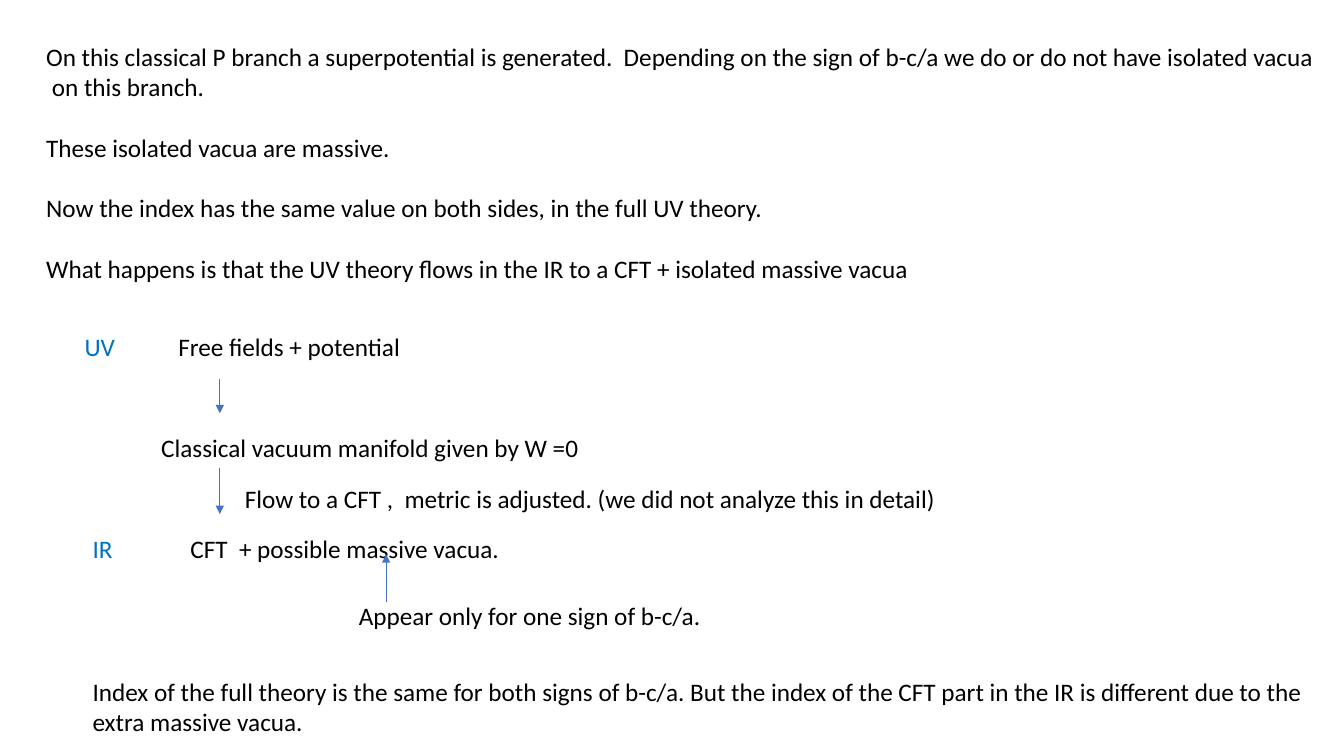
from dataclasses import dataclass

from lxml import etree
from pptx import Presentation
from pptx import util as u
from pptx.dml.color import RGBColor
from pptx.enum import shapes, text
from pptx.oxml.ns import qn
from pptx.slide import Slide

EMU_PER_PX = 9144
FONT = "Calibri"
BLACK, SCALE_BLUE, ARROW_BLUE = "000000", "0070C0", "4472C4"
STATEMENT_GAP = 21.6


@dataclass(frozen=True)
class Passage:
    left: int
    top: int
    width: int
    height: int
    lines: tuple[str, ...]
    colour: str = BLACK
    wraps: bool = False
    spaced_from: int = 1


@dataclass(frozen=True)
class Arrow:
    x: int
    start_y: int
    end_y: int


PASSAGES = (
    Passage(36, 36, 1293, 252, (
        "On this classical P branch a superpotential is generated.  "
        "Depending on the sign of b-c/a we do or do not have isolated vacua",
        " on this branch.",
        "These isolated vacua are massive.",
        "Now the index has the same value on both sides, in the full UV theory.",
        "What happens is that the UV theory flows in the IR to a CFT + isolated massive vacua",
    ), spaced_from=2),
    Passage(167, 324, 255, 40, ("Free fields + potential",)),
    Passage(150, 424, 439, 40, ("Classical vacuum manifold given by W =0",)),
    Passage(233, 475, 713, 40, (
        "Flow to a CFT ,  metric is adjusted. (we did not analyze this in detail)",)),
    Passage(179, 524, 336, 40, ("CFT  + possible massive vacua.",)),
    Passage(74, 324, 51, 40, ("UV",), SCALE_BLUE),
    Passage(82, 524, 40, 40, ("IR",), SCALE_BLUE),
    Passage(346, 591, 369, 40, ("Appear only for one sign of b-c/a.",)),
    Passage(82, 666, 1223, 71, (
        "Index of the full theory is the same for both signs of b-c/a. "
        "But the index of the CFT part in the IR is different due to the extra massive vacua.",
    ), wraps=True),
)

ARROWS = (Arrow(218, 376, 410), Arrow(218, 464, 510), Arrow(383, 597, 550))


def px(length: int) -> u.Emu:
    return u.Emu(length * EMU_PER_PX)


def rgb(colour: str) -> RGBColor:
    return RGBColor.from_string(colour)


def draw_passage(slide: Slide, passage: Passage) -> None:
    box = slide.shapes.add_textbox(
        px(passage.left), px(passage.top), px(passage.width), px(passage.height))
    frame = box.text_frame
    frame.text = "\n".join(passage.lines)
    frame.word_wrap = passage.wraps
    frame.auto_size = text.MSO_AUTO_SIZE.SHAPE_TO_FIT_TEXT
    for number, paragraph in enumerate(frame.paragraphs):
        paragraph.font.name = FONT
        paragraph.font.size = u.Pt(18)
        paragraph.font.color.rgb = rgb(passage.colour)
        if number >= passage.spaced_from:
            paragraph.space_before = u.Pt(STATEMENT_GAP)


def draw_arrow(slide: Slide, arrow: Arrow) -> None:
    connector = slide.shapes.add_connector(
        shapes.MSO_CONNECTOR.STRAIGHT,
        px(arrow.x), px(arrow.start_y), px(arrow.x), px(arrow.end_y))
    connector.line.color.rgb = rgb(ARROW_BLUE)
    connector.line.width = u.Pt(0.5)
    properties = connector._element.spPr
    etree.SubElement(properties.find(qn("a:ln")), qn("a:tailEnd"), type="triangle")
    etree.SubElement(properties, qn("a:effectLst"))


def main() -> None:
    deck = Presentation()
    deck.slide_width, deck.slide_height = px(1333), px(750)
    slide = deck.slides.add_slide(deck.slide_layouts[6])
    for passage in PASSAGES:
        draw_passage(slide, passage)
    for arrow in ARROWS:
        draw_arrow(slide, arrow)
    deck.save("out.pptx")


if __name__ == "__main__":
    main()
